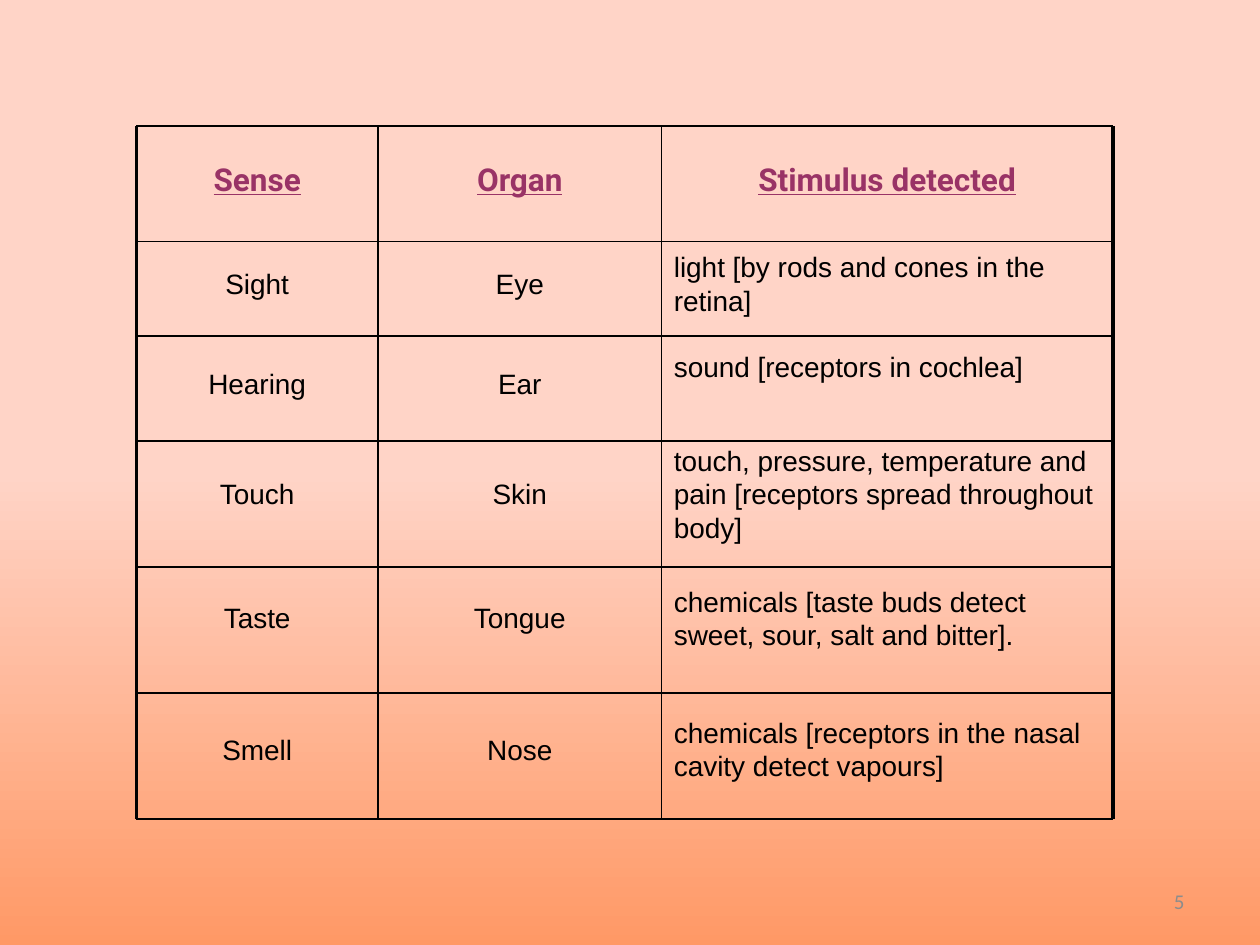
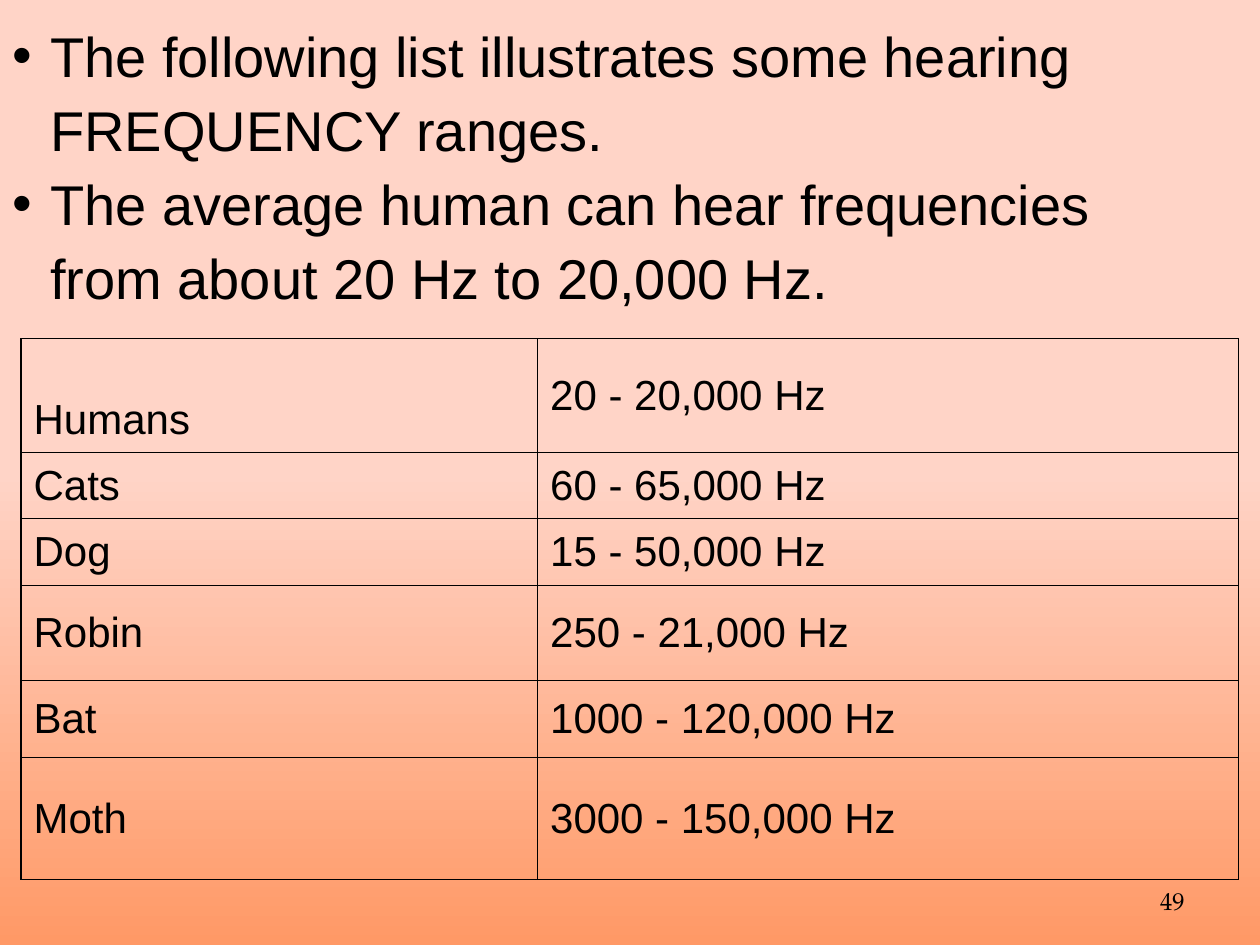
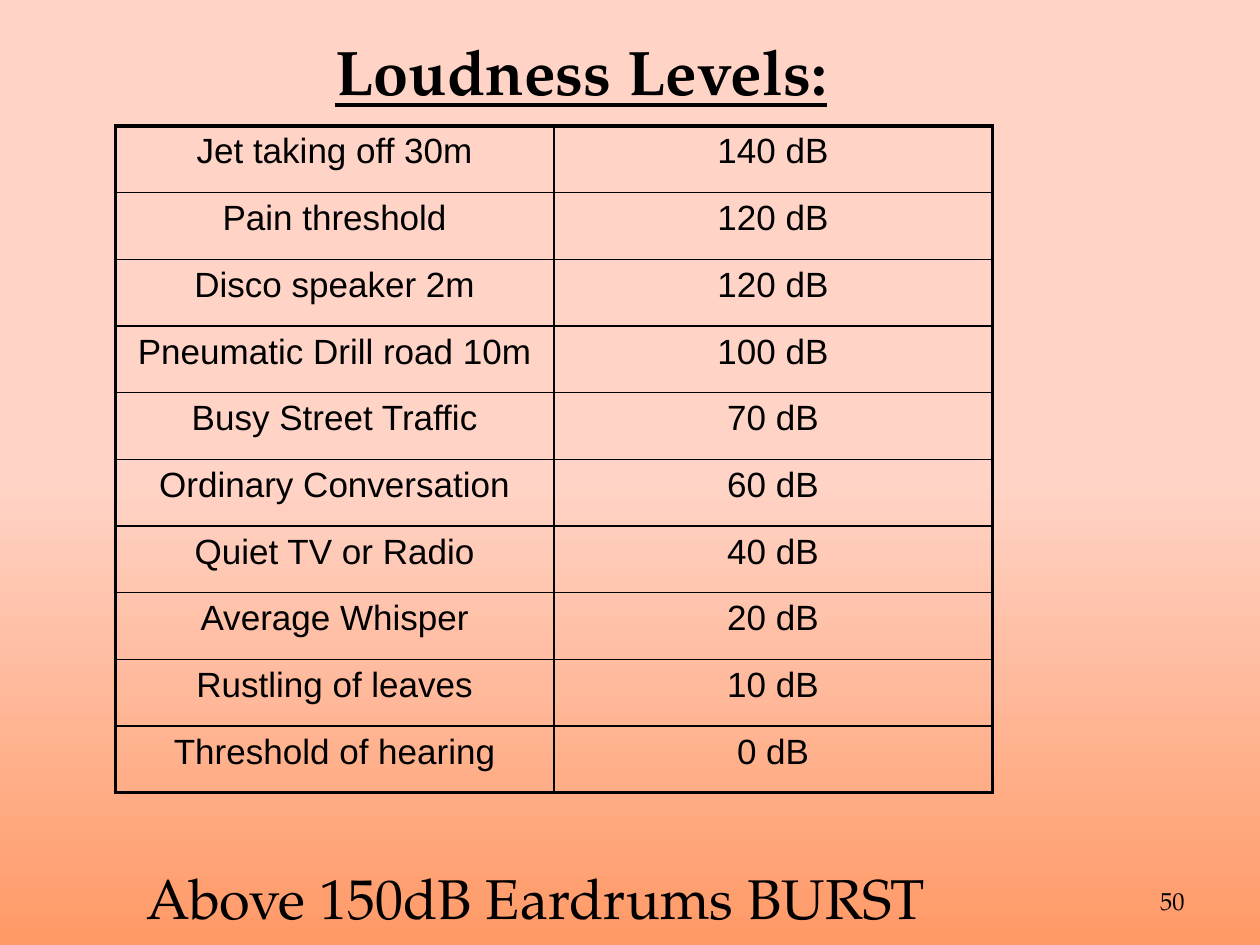
from itertools import pairwise

from lxml.etree import SubElement
from pptx import Presentation
from pptx.dml.color import RGBColor
from pptx.enum.shapes import MSO_CONNECTOR
from pptx.enum.text import MSO_ANCHOR, PP_ALIGN
from pptx.oxml.ns import qn
from pptx.util import Pt

BLACK, PLUM, GREY = "000000", "993366", "8C8C8C"
PEACH, ORANGE = "FFD4C7", "FF9966"
BODY_FONT, HEADING_FONT, SERIF_FONT = "Arial", "Roboto", "TeX Gyre Pagella"
LEFT, CENTER, RIGHT = PP_ALIGN.LEFT, PP_ALIGN.CENTER, PP_ALIGN.RIGHT
TOP, MIDDLE = MSO_ANCHOR.TOP, MSO_ANCHOR.MIDDLE
THIN, INNER, OUTER = 0.75, 1, 2.25

SENSE_COLUMNS = [78, 216, 378, 636]
SENSE_TEXT_ROWS = [72, 132, 192, 246, 318, 388, 468]
SENSE_LINES = [72, 138, 192, 252, 324, 396, 468]
SENSES = [
    ("Sense", "Organ", "Stimulus detected"),
    ("Sight", "Eye", "light [by rods and cones in the retina]"),
    ("Hearing", "Ear", "sound [receptors in cochlea]"),
    ("Touch", "Skin", "touch, pressure, temperature and pain "
                      "[receptors spread throughout body]"),
    ("Taste", "Tongue", "chemicals [taste buds detect sweet, sour, salt and bitter]."),
    ("Smell", "Nose", "chemicals [receptors in the nasal cavity detect vapours]"),
]
HEARING_POINTS = [
    "The following list illustrates some hearing FREQUENCY ranges.",
    "The average human can hear frequencies from about 20 Hz to 20,000 Hz.",
]
HEARING_RANGES = [
    ("Humans", "20 - 20,000 Hz"),
    ("Cats", "60 - 65,000 Hz"),
    ("Dog", "15 - 50,000 Hz"),
    ("Robin", "250 - 21,000 Hz"),
    ("Bat", "1000 - 120,000 Hz"),
    ("Moth", "3000 - 150,000 Hz"),
]
LOUDNESS = [
    ("Jet taking off 30m", "140 dB"),
    ("Pain threshold", "120 dB"),
    ("Disco speaker 2m", "120 dB"),
    ("Pneumatic Drill road 10m", "100 dB"),
    ("Busy Street Traffic", "70 dB"),
    ("Ordinary Conversation", "60 dB"),
    ("Quiet TV or Radio", "40 dB"),
    ("Average Whisper", "20 dB"),
    ("Rustling of leaves", "10 dB"),
    ("Threshold of hearing", "0 dB"),
]


def rgb(color):
    return RGBColor.from_string(color)


def write(tf, text, size, font=BODY_FONT, color=BLACK, align=LEFT, strong=False):
    """Fill a text frame, one paragraph a line; strong is bold and underlined."""
    tf.text = text
    for p in tf.paragraphs:
        p.alignment = align
        for r in p.runs:
            r.font.size, r.font.name = Pt(size), font
            r.font.color.rgb = rgb(color)
            r.font.bold = r.font.underline = strong


def add_text(shapes, text, x, y, w, h, size, anchor=MIDDLE, **style):
    tf = shapes.add_textbox(Pt(x), Pt(y), Pt(w), Pt(h)).text_frame
    tf.word_wrap = True
    tf.vertical_anchor = anchor
    write(tf, text, size, **style)
    return tf


def add_line(shapes, x1, y1, x2, y2, width):
    line = shapes.add_connector(MSO_CONNECTOR.STRAIGHT, Pt(x1), Pt(y1), Pt(x2), Pt(y2))
    line.line.color.rgb = rgb(BLACK)
    line.line.width = Pt(width)
    SubElement(line._element.spPr, qn("a:effectLst"))


def add_bullets(tf, indent, spacing):
    for p in tf.paragraphs:
        p.line_spacing = spacing
        pPr = p._p.get_or_add_pPr()
        pPr.set("marL", str(Pt(indent)))
        pPr.set("indent", str(-Pt(indent)))
        SubElement(pPr, qn("a:buFont"), typeface=BODY_FONT)
        SubElement(pPr, qn("a:buChar"), char="•")


def set_borders(cell, widths):
    """Draw the left, right, top and bottom borders, ahead of the cell's fill."""
    tcPr = cell._tc.get_or_add_tcPr()
    for i, (side, width) in enumerate(zip("LRTB", widths)):
        ln = SubElement(tcPr, qn(f"a:ln{side}"), w=str(Pt(width)))
        fill = SubElement(ln, qn("a:solidFill"))
        SubElement(fill, qn("a:srgbClr"), val=BLACK)
        tcPr.insert(i, ln)


def add_grid(slide, rows, x, y, widths, heights, size, align, anchor, inner, outer):
    table = slide.shapes.add_table(len(rows), len(widths), Pt(x), Pt(y),
                                   Pt(sum(widths)), Pt(sum(heights))).table
    table.first_row = table.horz_banding = False
    for column, width in zip(table.columns, widths):
        column.width = Pt(width)
    for row, height in zip(table.rows, heights):
        row.height = Pt(height)
    last_row, last_col = len(rows) - 1, len(widths) - 1
    for i, row in enumerate(rows):
        for j, text in enumerate(row):
            cell = table.cell(i, j)
            cell.fill.background()
            cell.vertical_anchor = anchor
            write(cell.text_frame, text, size, align=align)
            edges = (j == 0, j == last_col, i == 0, i == last_row)
            set_borders(cell, [outer if edge else inner for edge in edges])
    return table


def add_number(slide, number, size=14, font=SERIF_FONT, color=BLACK):
    add_text(slide.shapes, str(number), 516, 500.4, 168, 28.8, size,
             font=font, color=color, align=RIGHT)


def add_slide(prs):
    return prs.slides.add_slide(prs.slide_layouts[6])


def set_background(master):
    fill = master.background.fill
    fill.gradient()
    fill.gradient_angle = 270
    for stop, color, position in zip(fill.gradient_stops, (PEACH, ORANGE), (0.5, 1)):
        stop.color.rgb = rgb(color)
        stop.position = position


def build_senses(prs):
    slide = add_slide(prs)
    shapes = slide.shapes.add_group_shape().shapes
    top, bottom = SENSE_LINES[0], SENSE_LINES[-1]
    columns = list(pairwise(SENSE_COLUMNS))
    for row, (y1, y2) in zip(SENSES, pairwise(SENSE_TEXT_ROWS)):
        for j, (text, (x1, x2)) in enumerate(zip(row, columns)):
            if row is SENSES[0]:
                style = dict(size=18, font=HEADING_FONT, color=PLUM,
                             align=CENTER, strong=True)
            else:
                style = dict(size=16, align=CENTER if j < 2 else LEFT)
            tf = add_text(shapes, text, x1, y1, x2 - x1, y2 - y1, **style)
            if text.startswith("sound"):
                tf.margin_bottom = Pt(23)
    for x in SENSE_COLUMNS:
        edge = x in (SENSE_COLUMNS[0], SENSE_COLUMNS[-1])
        add_line(shapes, x, top, x, bottom, OUTER if edge else INNER)
    for x1, x2 in columns:
        for y in SENSE_LINES:
            add_line(shapes, x1, y, x2, y, THIN)
    add_number(slide, 5, 12, "Calibri", GREY)


def build_hearing(prs):
    slide = add_slide(prs)
    tf = add_text(slide.shapes, "\n".join(HEARING_POINTS), 0, 4.5, 696, 177, 32)
    add_bullets(tf, indent=21.6, spacing=1.1)
    table = add_grid(slide, HEARING_RANGES, 12, 193.5, [295.2, 400.6],
                     [65, 38, 38.2, 54.2, 44, 69.8], 24, LEFT, MIDDLE, THIN, THIN)
    table.cell(0, 0).margin_top = Pt(31)
    add_number(slide, 49)


def build_loudness(prs):
    slide = add_slide(prs)
    add_text(slide.shapes, "Loudness Levels:", 184.5, 15, 374.4, 51, 36, TOP,
             font=SERIF_FONT, strong=True)
    add_grid(slide, LOUDNESS, 66, 72, [250.5] * 2, [38.1] * len(LOUDNESS),
             20, CENTER, TOP, INNER, OUTER)
    add_text(slide.shapes, "Above 150dB Eardrums BURST", 76.5, 489.6, 561.6, 46, 32, TOP,
             font=SERIF_FONT)
    add_number(slide, 50)


def main():
    prs = Presentation()
    prs.slide_width, prs.slide_height = Pt(720), Pt(540)
    set_background(prs.slide_master)
    build_senses(prs)
    build_hearing(prs)
    build_loudness(prs)
    prs.save("out.pptx")


if __name__ == "__main__":
    main()
